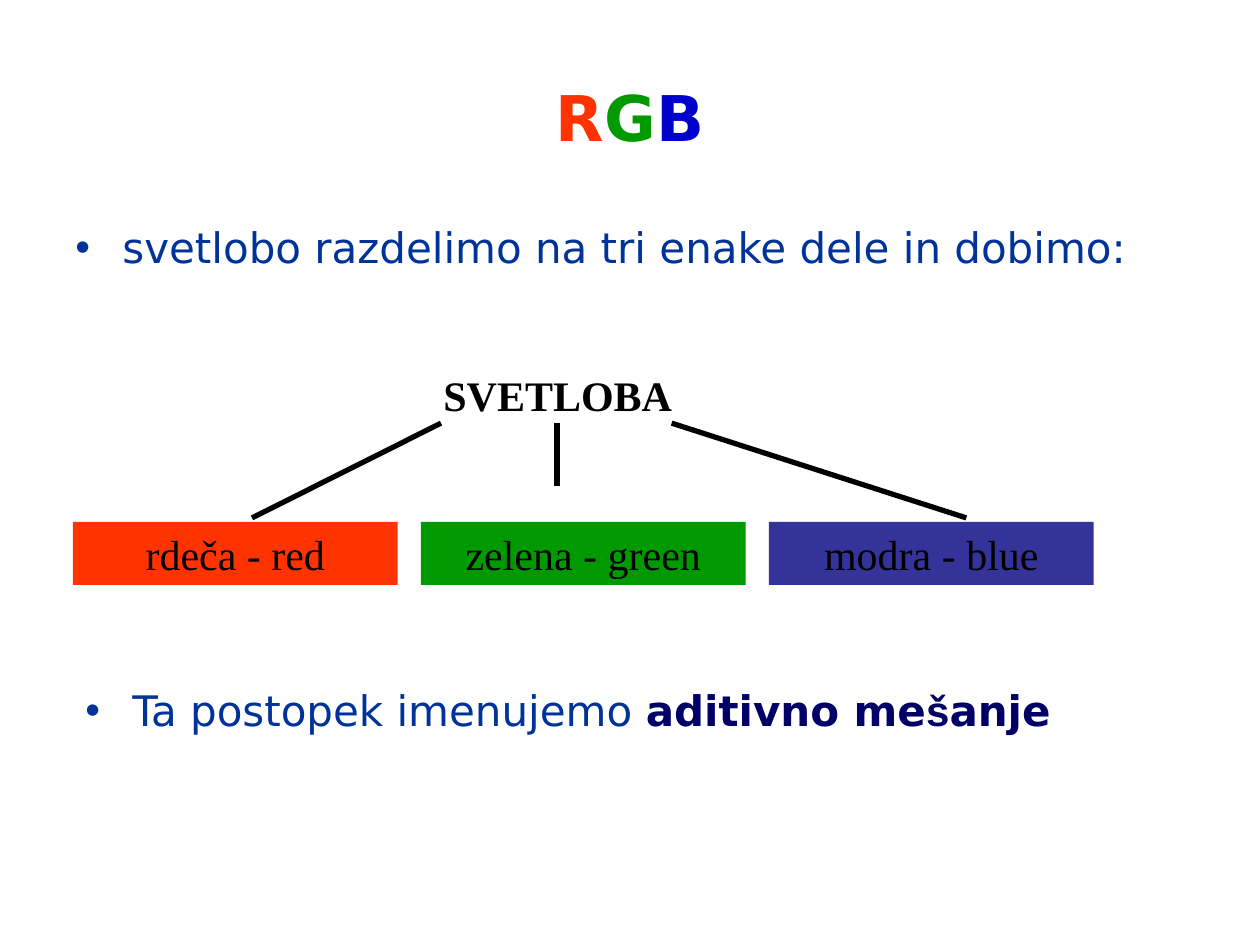
from lxml import etree
from pptx import Presentation
from pptx.dml.color import RGBColor
from pptx.enum.shapes import MSO_CONNECTOR, MSO_SHAPE
from pptx.enum.text import MSO_ANCHOR, PP_ALIGN
from pptx.oxml.ns import qn
from pptx.util import Cm, Pt

CENTER, LEFT = PP_ALIGN.CENTER, PP_ALIGN.LEFT
TOP, MIDDLE = MSO_ANCHOR.TOP, MSO_ANCHOR.MIDDLE
RECTANGLE, STRAIGHT = MSO_SHAPE.RECTANGLE, MSO_CONNECTOR.STRAIGHT

SANS, SERIF, ARIAL = "DejaVu Sans", "Times New Roman", "Arial"
RED, GREEN, BLUE = "FF3300", "009900", "0000CC"
BOX_BLUE, TEXT_BLUE, TERM_BLUE, BLACK = "333399", "003399", "000066", "000000"

TITLE = {"name": SANS, "size": Pt(36), "bold": True}
BODY = {"name": SANS, "size": Pt(24), "bold": False}
TERM = {**BODY, "bold": True}
LABEL = {"name": SERIF, "size": Pt(24), "bold": False}

LABEL_WIDTH, LABEL_HEIGHT = 6.55, 1.27


def color(hex_value):
    return RGBColor.from_string(hex_value)


def write(shape, runs, align=LEFT, anchor=TOP):
    """Fill the shape with one paragraph of (text, font format, colour) runs."""
    frame = shape.text_frame
    frame.word_wrap = True
    frame.vertical_anchor = anchor
    paragraph = frame.paragraphs[0]
    paragraph.alignment = align
    for text, font_format, hex_value in runs:
        run = paragraph.add_run()
        run.text = text
        for attribute, value in font_format.items():
            setattr(run.font, attribute, value)
        run.font.color.rgb = color(hex_value)
    return paragraph


def add_text(slide, box, runs, **layout):
    textbox = slide.shapes.add_textbox(*map(Cm, box))
    return write(textbox, runs, **layout)


def add_bullet(slide, box, runs):
    paragraph = add_text(slide, box, runs)
    properties = paragraph._p.get_or_add_pPr()
    properties.set("marL", str(Cm(0.95)))
    properties.set("indent", str(Cm(-0.95)))
    etree.SubElement(properties, qn("a:buFont")).set("typeface", ARIAL)
    etree.SubElement(properties, qn("a:buChar")).set("char", "•")
    paragraph.line_spacing = 0.9


def add_color_box(slide, box, text, fill):
    rectangle = slide.shapes.add_shape(RECTANGLE, *map(Cm, box))
    rectangle.shadow.inherit = False
    rectangle.fill.solid()
    rectangle.fill.fore_color.rgb = color(fill)
    rectangle.line.fill.background()
    write(rectangle, [(text, LABEL, BLACK)], align=CENTER)


def add_branch(slide, start, end):
    branch = slide.shapes.add_connector(STRAIGHT, *map(Cm, start + end))
    branch.line.color.rgb = color(BLACK)
    branch.line.width = Pt(3)
    etree.SubElement(branch._element.spPr, qn("a:effectLst"))


def add_light_diagram(slide, box):
    """Draw the light label branching into three equally spaced colour boxes."""
    left, top, width, height = box
    add_text(slide, (left + 7.22, top, LABEL_WIDTH, LABEL_HEIGHT),
             [("SVETLOBA", {**LABEL, "bold": True}, BLACK)])

    components = [("rdeča - red", RED), ("zelena - green", GREEN),
                  ("modra - blue", BOX_BLUE)]
    step = (width - LABEL_WIDTH) / (len(components) - 1)
    box_top = top + height - LABEL_HEIGHT
    for index, (text, fill) in enumerate(components):
        add_color_box(slide, (left + index * step, box_top, LABEL_WIDTH, LABEL_HEIGHT),
                      text, fill)

    branches = [(7.42, 3.61, 3.12), (9.76, 9.76, 2.48), (12.07, 18.01, 3.12)]
    for start_x, end_x, end_y in branches:
        add_branch(slide, (left + start_x, top + 1.21), (left + end_x, top + end_y))


def main():
    presentation = Presentation()
    presentation.slide_width, presentation.slide_height = Cm(25.4), Cm(19.05)
    slide = presentation.slides.add_slide(presentation.slide_layouts[6])

    add_text(slide, (1.27, 0.76, 22.86, 3.18),
             [("R", TITLE, RED), ("G", TITLE, GREEN), ("B", TITLE, BLUE)],
             align=CENTER, anchor=MIDDLE)
    add_bullet(slide, (1.27, 4.45, 22.86, 2.29),
               [("svetlobo razdelimo na tri enake dele in dobimo:", BODY, TEXT_BLUE)])
    add_light_diagram(slide, (1.47, 7.32, 20.58, 4.47))
    add_bullet(slide, (1.47, 13.79, 21.59, 2.74),
               [("Ta postopek imenujemo ", BODY, TEXT_BLUE),
                ("aditivno me", TERM, TERM_BLUE),
                ("š", {**TERM, "name": ARIAL}, TERM_BLUE),
                ("anje", TERM, TERM_BLUE)])

    presentation.save("out.pptx")


if __name__ == "__main__":
    main()
